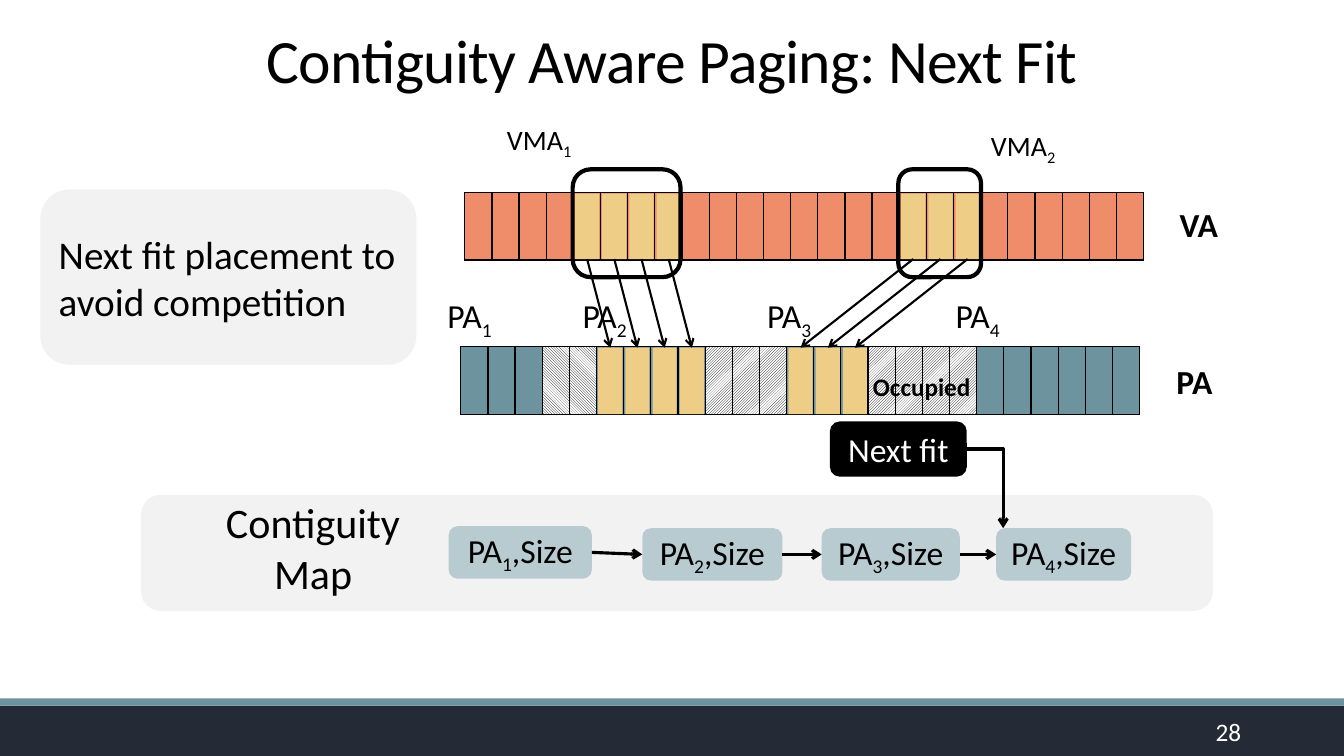
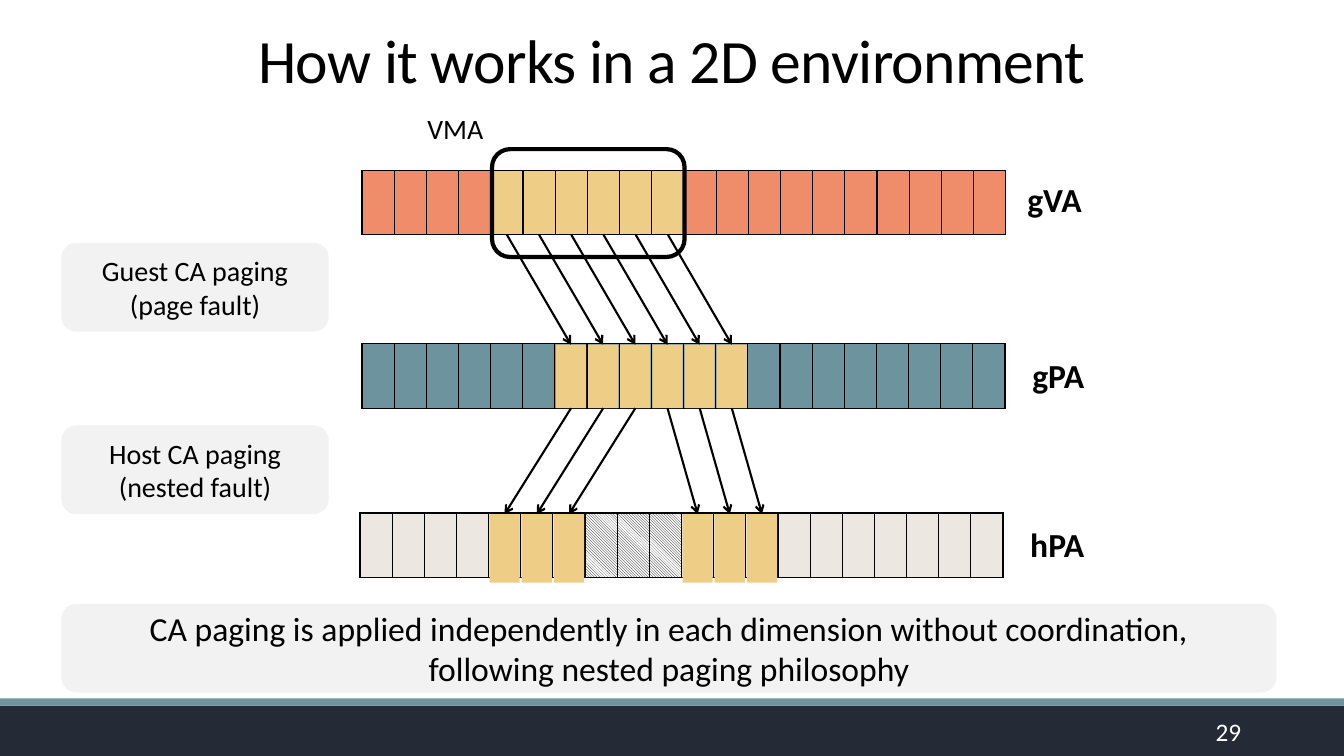
"""Builds two slides on contiguity aware paging."""
from dataclasses import dataclass

from lxml import etree
from pptx import Presentation
from pptx import util as u
from pptx.dml import color
from pptx.enum import dml, shapes, text
from pptx.oxml import ns


@dataclass(frozen=True)
class Theme:
    font: str = "Calibri"
    ink: str = "000000"
    paper: str = "FFFFFF"
    footer: str = "242B37"
    teal: str = "6D939E"
    orange: str = "EF8C6A"
    sand: str = "ECE8E1"
    page: str = "EECD86"
    panel: str = "F2F2F2"
    node: str = "B8CBD0"
    title: int = 44
    heading: int = 30
    statement: int = 28
    body: int = 24
    small: int = 20
    note: int = 18


T = Theme()
ROUND, RECT = shapes.MSO_SHAPE.ROUNDED_RECTANGLE, shapes.MSO_SHAPE.RECTANGLE
CENTER, LEFT, RIGHT = text.PP_ALIGN.CENTER, text.PP_ALIGN.LEFT, text.PP_ALIGN.RIGHT
HATCH = {"down": dml.MSO_PATTERN.DARK_DOWNWARD_DIAGONAL,
         "up": dml.MSO_PATTERN.DARK_UPWARD_DIAGONAL}
TOP, BOTTOM_SIDE, LEFT_SIDE, RIGHT_SIDE = 0, 2, 1, 3

# In every tuple of runs, the odd positions are subscripts.
NEXT_FIT = {
    "title": "Contiguity Aware Paging: Next Fit",
    "number": "28",
    "panels": [
        ([], (1.4, 4.91, 10.63, 1.15), T.body, CENTER),
        ([("Next fit placement to avoid competition",)],
         (0.4, 1.88, 3.73, 1.74), T.statement, LEFT),
    ],
    "rows": {
        "VA": {"at": (4.61, 1.91), "size": (6.74, 0.67), "cells": [(T.orange, 25)],
               "pages": [(4, 4), (16, 3)], "page": (0.24, 0.65)},
        "PA": {"at": (4.57, 3.44), "size": (6.74, 0.67),
               "cells": [(T.teal, 3), ("down", 2), (T.teal, 4), ("up", 3),
                         (T.teal, 3), ("up", 4), (T.teal, 6)],
               "pages": [(5, 4), (12, 3)], "page": (0.24, 0.66)},
    },
    "frames": [(5.68, 1.68, 1.07, 1.07), (8.91, 1.68, 0.82, 1.07)],
    "mappings": [("VA", "PA", 4, 5, 4), ("VA", "PA", 16, 12, 3)],
    "labels": [
        (("VA",), 11.6, 1.97, 0.59, T.body, True),
        (("PA",), 11.57, 3.53, 0.56, T.body, True),
        (("Occupied",), 8.56, 3.63, 1.17, T.note, True),
        (("VMA", "1"), 4.93, 1.17, 0.86, T.small, False),
        (("VMA", "2"), 9.73, 1.23, 0.86, T.small, False),
        (("PA", "1"), 4.34, 2.88, 0.66, T.body, False),
        (("PA", "2"), 5.68, 2.88, 0.66, T.body, False),
        (("PA", "3"), 7.51, 2.88, 0.66, T.body, False),
        (("PA", "4"), 9.38, 2.88, 0.66, T.body, False),
    ],
}
CONTIGUITY_MAP = {
    "name": ("Contiguity Map", (2.08, 4.88, 2.05, 1.11)),
    "nodes": [(4.45, 5.22, 1.42, 0.52), (6.37, 5.24, 1.39, 0.52),
              (8.15, 5.24, 1.37, 0.52), (9.88, 5.24, 1.34, 0.52)],
    "pointer": ("Next fit", (8.24, 4.19, 1.34, 0.53), (9.95, 5.24)),
}
TWO_DIMENSIONS = {
    "title": "How it works in a 2D environment",
    "number": "29",
    "panels": [
        ([("Guest CA paging",), ("(page fault)",)], (0.61, 2.41, 2.65, 0.88), T.small, CENTER),
        ([("Host CA paging",), ("(nested fault)",)], (0.61, 4.22, 2.65, 0.88), T.small, CENTER),
        ([("CA paging is applied independently in each dimension without coordination,",),
          ("following nested paging philosophy",)],
         (0.61, 5.99, 12.05, 0.88), T.body, CENTER),
    ],
    "rows": {
        "gVA": {"at": (3.59, 1.69), "size": (6.39, 0.64),
                "cells": [(T.orange, 4), (T.page, 6), (T.orange, 10)],
                "pages": [], "page": (0.3, 0.63)},
        "gPA": {"at": (3.59, 3.41), "size": (6.38, 0.64), "cells": [(T.teal, 20)],
                "pages": [(6, 6)], "page": (0.3, 0.63)},
        "hPA": {"at": (3.57, 5.09), "size": (6.38, 0.64),
                "cells": [(T.sand, 7), ("down", 3), (T.sand, 10)],
                "pages": [(4, 3), (10, 3)], "page": (0.3, 0.68)},
    },
    "frames": [(4.88, 1.48, 1.91, 1.07)],
    "mappings": [("gVA", "gPA", 4, 6, 6), ("gPA", "hPA", 6, 4, 3), ("gPA", "hPA", 9, 10, 3)],
    "labels": [
        (("gVA",), 10.09, 1.73, 0.75, T.body, True),
        (("gPA",), 10.14, 3.47, 0.72, T.body, True),
        (("hPA",), 10.12, 5.15, 0.74, T.body, True),
        (("VMA",), 4.14, 1.06, 0.77, T.small, False),
    ],
}


def rgb(code):
    return color.RGBColor.from_string(code)


def inches(values):
    return [u.Inches(value) for value in values]


def write(shape, paragraphs, size, align=CENTER, ink=T.ink, bold=False):
    frame = shape.text_frame
    for index, runs in enumerate(paragraphs):
        paragraph = frame.add_paragraph() if index else frame.paragraphs[0]
        paragraph.alignment = align
        for position, words in enumerate(runs):
            run = paragraph.add_run()
            run.text = words
            run.font.name, run.font.size, run.font.bold = T.font, u.Pt(size), bold
            run.font.color.rgb = rgb(ink)
            if position % 2:
                run.font._element.set("baseline", "-25000")


def add_box(slide, box, fill=None, kind=ROUND, line=0):
    shape = slide.shapes.add_shape(kind, *inches(box))
    shape.shadow.inherit = False
    shape.text_frame.word_wrap = True
    shape.text_frame.vertical_anchor = text.MSO_ANCHOR.MIDDLE
    if fill:
        shape.fill.solid()
        shape.fill.fore_color.rgb = rgb(fill)
    else:
        shape.fill.background()
    if line:
        shape.line.color.rgb, shape.line.width = rgb(T.ink), u.Pt(line)
    else:
        shape.line.fill.background()
    return shape


def add_words(slide, box, runs, size, wrap=True, anchor=text.MSO_ANCHOR.TOP, **style):
    words = slide.shapes.add_textbox(*inches(box))
    words.text_frame.word_wrap = wrap
    words.text_frame.vertical_anchor = anchor
    write(words, [runs], size, **style)
    return words


def add_arrow(slide, start, end, width, kind=shapes.MSO_CONNECTOR.STRAIGHT):
    arrow = slide.shapes.add_connector(kind, *inches(start + end))
    arrow.line.color.rgb, arrow.line.width = rgb(T.ink), u.Pt(width)
    etree.SubElement(arrow.line._get_or_add_ln(), ns.qn("a:tailEnd"), type="arrow")
    etree.SubElement(arrow._element.spPr, ns.qn("a:effectLst"))
    return arrow


def add_borders(cell):
    properties = cell._tc.get_or_add_tcPr()
    for side in ("lnL", "lnR", "lnT", "lnB"):
        border = etree.SubElement(properties, ns.qn(f"a:{side}"), w=str(u.Pt(1)))
        solid = etree.SubElement(border, ns.qn("a:solidFill"))
        etree.SubElement(solid, ns.qn("a:srgbClr"), val=T.ink)


def add_row(slide, row):
    """Draws one address space and returns its pages by column."""
    fills = [fill for fill, count in row["cells"] for _ in range(count)]
    (left, top), (width, height) = row["at"], row["size"]
    pitch = width / len(fills)
    table = slide.shapes.add_table(1, len(fills), *inches((left, top, width, height))).table
    table.first_row = table.horz_banding = False
    for column, fill in enumerate(fills):
        table.columns[column].width = u.Inches(pitch)
        cell = table.cell(0, column)
        cell.margin_left = cell.margin_right = 0
        add_borders(cell)
        if fill in HATCH:
            cell.fill.patterned()
            cell.fill.pattern = HATCH[fill]
            cell.fill.fore_color.rgb, cell.fill.back_color.rgb = rgb(T.ink), rgb(T.paper)
        else:
            cell.fill.solid()
            cell.fill.fore_color.rgb = rgb(fill)
    page_width, page_height = row["page"]
    inset = (pitch - page_width) / 2
    return {column: add_box(slide, (left + column * pitch + inset, top + 0.01,
                                    page_width, page_height), T.page, RECT)
            for first, count in row["pages"] for column in range(first, first + count)}


def column_center(row, column):
    count = sum(number for _, number in row["cells"])
    return row["at"][0] + (column + 0.5) * row["size"][0] / count


def add_mapping(slide, rows, pages, source, target, first, goal, count):
    upper, lower = rows[source], rows[target]
    for step in range(count):
        start = (column_center(upper, first + step), upper["at"][1] + upper["size"][1])
        end = (column_center(lower, goal + step), lower["at"][1])
        arrow = add_arrow(slide, start, end, 1.5)
        if first + step in pages[source]:
            arrow.begin_connect(pages[source][first + step], BOTTOM_SIDE)
        arrow.end_connect(pages[target][goal + step], TOP)


def add_base(deck, title, number):
    slide = deck.slides.add_slide(deck.slide_layouts[6])
    add_box(slide, (0, 7, 13.33, 0.5), T.footer, RECT)
    add_box(slide, (0, 6.93, 13.33, 0.07), T.teal, RECT)
    heading = add_words(slide, (0, 0.01, 13.33, 0.99), (title,), T.title,
                        anchor=text.MSO_ANCHOR.BOTTOM)
    paragraph = heading.text_frame.paragraphs[0]
    paragraph.line_spacing = 0.85
    paragraph.runs[0].font._element.set("spc", "-50")
    add_words(slide, (10.98, 7.06, 1.43, 0.4), (number,), T.note,
              anchor=text.MSO_ANCHOR.MIDDLE, align=RIGHT, ink=T.paper)
    return slide


def add_paging_slide(deck, content):
    slide = add_base(deck, content["title"], content["number"])
    for paragraphs, box, size, align in content["panels"]:
        write(add_box(slide, box, T.panel), paragraphs, size, align)
    rows = content["rows"]
    pages = {name: add_row(slide, row) for name, row in rows.items()}
    for box in content["frames"]:
        add_box(slide, box, line=3)
    for runs, left, top, width, size, bold in content["labels"]:
        height = size * 1.2 / 72 + 0.1
        add_words(slide, (left, top, width, height), runs, size, wrap=False,
                  align=LEFT, bold=bold)
    for mapping in content["mappings"]:
        add_mapping(slide, rows, pages, *mapping)
    return slide


def add_contiguity_map(slide, content):
    name, name_box = content["name"]
    add_words(slide, name_box, (name,), T.heading)
    nodes = []
    for index, box in enumerate(content["nodes"], 1):
        node = add_box(slide, box, T.node)
        write(node, [("PA", str(index), ",Size")], T.body)
        nodes.append(node)
    for before, after in zip(nodes, nodes[1:]):
        link = add_arrow(slide, (0, 0), (1, 1), 2.25)
        link.begin_connect(before, RIGHT_SIDE)
        link.end_connect(after, LEFT_SIDE)
    words, box, tip = content["pointer"]
    pointer = add_box(slide, box, T.ink, line=1.25)
    write(pointer, [(words,)], T.body, ink=T.paper)
    left, top, width, height = box
    elbow = add_arrow(slide, (left + width, top + height / 2), tip, 2.25,
                      shapes.MSO_CONNECTOR.ELBOW)
    elbow._element.spPr.find(ns.qn("a:prstGeom")).set("prst", "bentConnector2")
    elbow.begin_connect(pointer, RIGHT_SIDE)


def main():
    deck = Presentation()
    deck.slide_width, deck.slide_height = inches((13.33, 7.5))
    add_contiguity_map(add_paging_slide(deck, NEXT_FIT), CONTIGUITY_MAP)
    add_paging_slide(deck, TWO_DIMENSIONS)
    deck.save("out.pptx")


if __name__ == "__main__":
    main()
